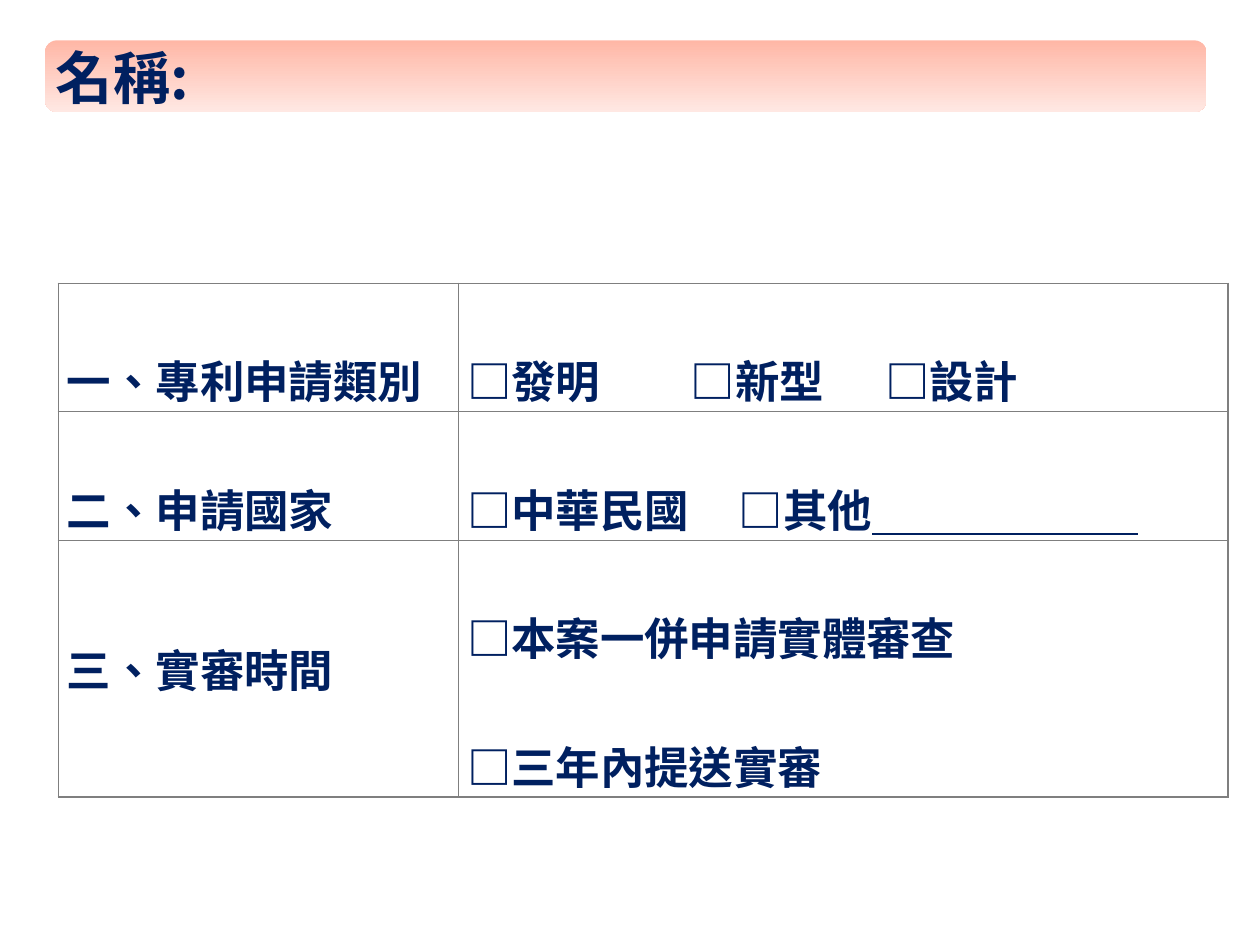
"""Build the patent application form slide with its title bar and choice table."""
from dataclasses import dataclass

from lxml.etree import SubElement
from pptx import Presentation
from pptx.dml.color import RGBColor
from pptx.enum.lang import MSO_LANGUAGE_ID as Language
from pptx.enum.shapes import MSO_SHAPE as Preset
from pptx.enum.text import MSO_ANCHOR as Anchor
from pptx.oxml.ns import qn
from pptx.util import Pt

COLORS = {"ink": "002060", "border": "7F7F7F", "bar_top": "FFB7A6", "bar_bottom": "FFE8E3"}
FONT = "Noto Sans CJK SC"
COLUMN_WIDTHS = (252, 484.8)
ROW_HEIGHTS = (65.4, 65.4, 130.5)


@dataclass(frozen=True)
class Line:
    text: str
    tab_stops: tuple[float, ...] = ()
    spacing: float = 2
    blank: str = ""


@dataclass(frozen=True)
class FormRow:
    heading: Line
    choices: tuple[Line, ...]


FORM = (
    FormRow(Line("一、專利申請類別"), (Line("□發明\t□新型\t□設計", (141, 263.3)),)),
    FormRow(Line("二、申請國家"), (Line("□中華民國\t□其他", (171.3,), blank="　" * 6),)),
    FormRow(
        Line("三、實審時間", spacing=2.5),
        (Line("□本案一併申請實體審查"), Line("□三年內提送實審")),
    ),
)


def color(name: str) -> RGBColor:
    return RGBColor.from_string(COLORS[name])


def style(paragraph, size: float) -> None:
    font = paragraph.font
    font.size, font.bold, font.name = Pt(size), True, FONT
    font.language_id = Language.TRADITIONAL_CHINESE
    font.color.rgb = color("ink")
    defaults = paragraph._p.pPr.find(qn("a:defRPr"))
    SubElement(defaults, qn("a:ea"), typeface=FONT)


def write_line(paragraph, line: Line) -> None:
    paragraph.line_spacing = line.spacing
    if line.tab_stops:
        tabs = SubElement(paragraph._p.get_or_add_pPr(), qn("a:tabLst"))
        for stop in line.tab_stops:
            SubElement(tabs, qn("a:tab"), pos=str(Pt(stop)), algn="l")
    paragraph.add_run().text = line.text
    if line.blank:
        blank = paragraph.add_run()
        blank.text = line.blank
        blank.font.underline = True
    style(paragraph, 28)


def fill_cell(cell, lines: tuple[Line, ...]) -> None:
    cell.margin_left = cell.margin_right = Pt(5.4)
    cell.margin_top = cell.margin_bottom = Pt(0)
    cell.vertical_anchor = Anchor.TOP
    properties = cell._tc.get_or_add_tcPr()
    for side in ("lnL", "lnR", "lnT", "lnB"):
        border = SubElement(properties, qn(f"a:{side}"), w=str(Pt(1)))
        SubElement(SubElement(border, qn("a:solidFill")), qn("a:srgbClr"), val=COLORS["border"])
    cell.fill.background()
    frame = cell.text_frame
    for index, line in enumerate(lines):
        write_line(frame.add_paragraph() if index else frame.paragraphs[0], line)


def add_title_bar(shapes) -> None:
    bar = shapes.add_shape(Preset.ROUNDED_RECTANGLE, Pt(28.4), Pt(25.4), Pt(731.5), Pt(45.2))
    bar.shadow.inherit = False
    bar.line.fill.background()
    bar.fill.gradient()
    bar.fill.gradient_angle = 270
    for stop, position, name in zip(bar.fill.gradient_stops, (0, 1), ("bar_top", "bar_bottom")):
        stop.position = position
        stop.color.rgb = color(name)


def add_title_text(shapes) -> None:
    frame = shapes.add_textbox(Pt(35.3), Pt(22.6), Pt(737.3), Pt(51.1)).text_frame
    frame.word_wrap = True
    frame.vertical_anchor = Anchor.MIDDLE
    frame.margin_left = frame.margin_right = frame.margin_top = frame.margin_bottom = Pt(0)
    title = frame.paragraphs[0]
    title.add_run().text = "名稱:"
    style(title, 36)


def add_form(shapes) -> None:
    form = shapes.add_table(
        len(FORM), len(COLUMN_WIDTHS), Pt(36.8), Pt(178.4),
        Pt(sum(COLUMN_WIDTHS)), Pt(sum(ROW_HEIGHTS)),
    ).table
    form.first_row = form.horz_banding = False
    for column, width in zip(form.columns, COLUMN_WIDTHS):
        column.width = Pt(width)
    for row, height, entry in zip(form.rows, ROW_HEIGHTS, FORM):
        row.height = Pt(height)
        for cell, lines in zip(row.cells, ((entry.heading,), entry.choices)):
            fill_cell(cell, lines)


def main() -> None:
    deck = Presentation()
    deck.slide_width, deck.slide_height = Pt(793.7), Pt(595.28)
    shapes = deck.slides.add_slide(deck.slide_layouts[6]).shapes
    add_title_bar(shapes)
    add_form(shapes)
    add_title_text(shapes)
    deck.save("out.pptx")


if __name__ == "__main__":
    main()
